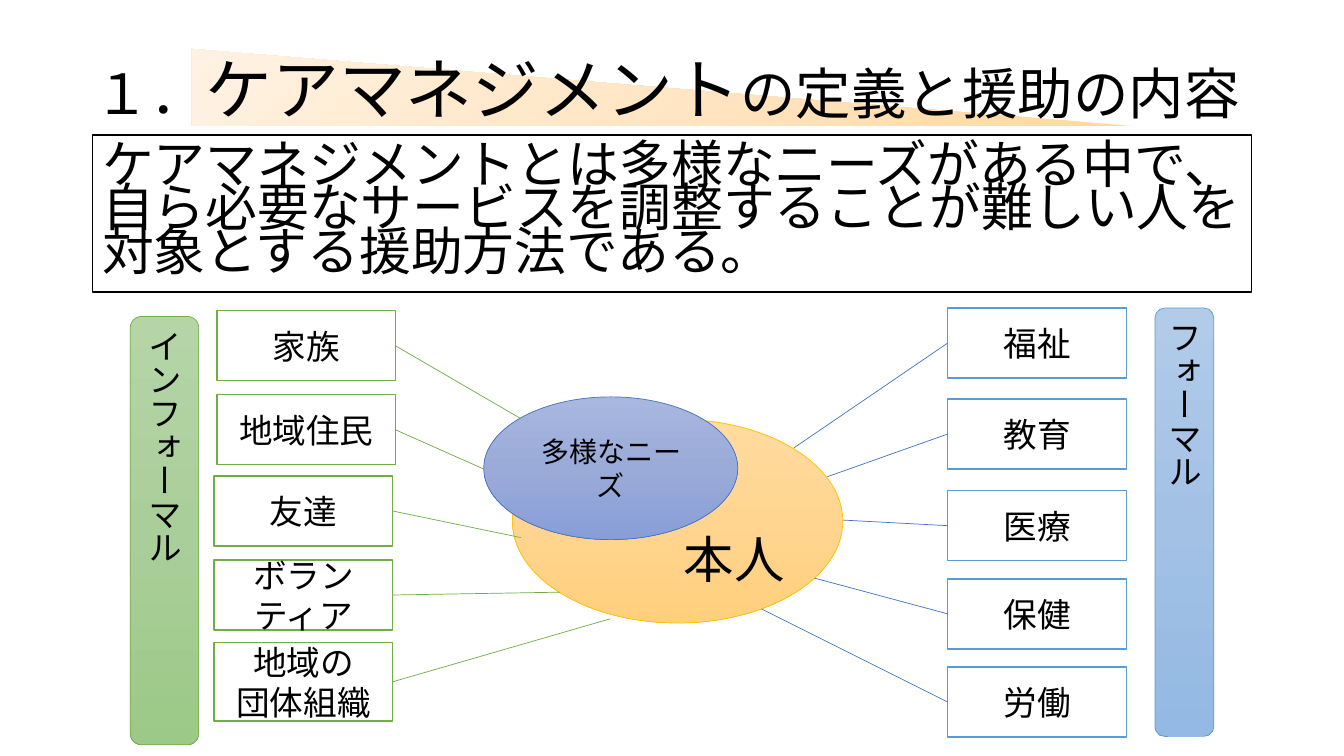
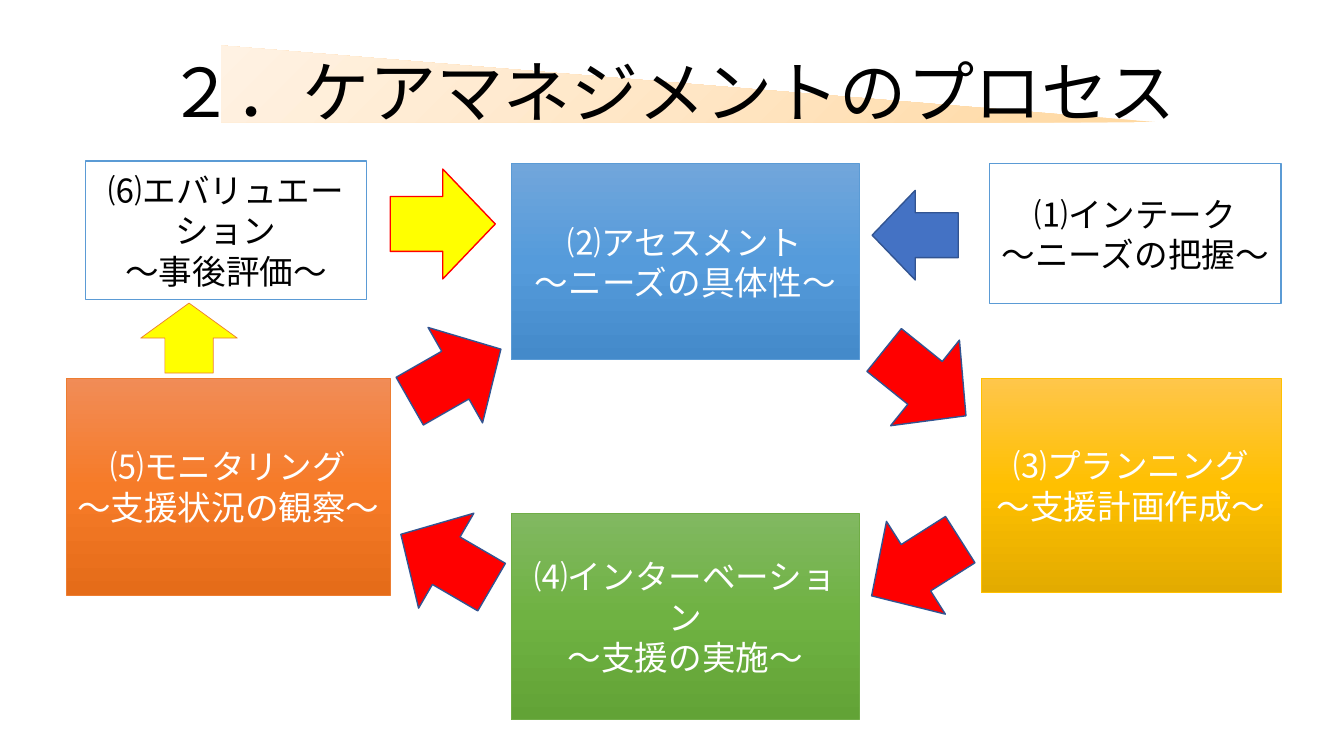
from lxml.etree import SubElement
from pptx import Presentation
from pptx.dml.color import RGBColor
from pptx.enum.lang import MSO_LANGUAGE_ID
from pptx.enum.shapes import MSO_CONNECTOR, MSO_SHAPE
from pptx.enum.text import MSO_ANCHOR, MSO_AUTO_SIZE, PP_ALIGN
from pptx.oxml.ns import qn
from pptx.util import Pt

COLORS = {
    "white": "FFFFFF",
    "black": "000000",
    "red": "FF0000",
    "yellow": "FFFF00",
    "blue": "4472C4",
    "navy": "325491",
    "sky": "5B9BD5",
    "green": "70AD47",
    "orange": "ED7D31",
    "gold": "FFC000",
}
GRADIENTS = {
    "title wedge": "FFD8A0 FFE6C5 FFF2E3",
    "formal bar": "B1CBE9 A3C1E5 93B9E4",
    "informal bar": "B5D5A7 AACE9A 9CC987",
    "person": "FFDB9E FFD590 FFD07C",
    "needs": "A8B7DF 9AABD9 889ED7",
    "assessment": "71A6DB 559BDB 448ACA",
    "planning": "FFC64B FFC000 E3AB00",
    "intervention": "81B861 6FB242 62A336",
    "monitoring": "F18C57 F67B28 E56C19",
}
GOTHIC = "Noto Sans CJK JP"
CALIBRI = "Calibri"
LEFT_SIDE, RIGHT_SIDE = 1, 3


def color(name):
    """Return the named colour."""
    return RGBColor.from_string(COLORS[name])


def points(*lengths):
    """Convert numbers to point lengths."""
    return [Pt(length) for length in lengths]


def format_span(span, size, font=GOTHIC, ink="black"):
    """Format one run of Japanese text."""
    span.font.size = Pt(size)
    span.font.name = font
    span.font.color.rgb = color(ink)
    span.font.language_id = MSO_LANGUAGE_ID.JAPANESE
    east_asian = SubElement(span.font._element, qn("a:ea"))
    east_asian.set("typeface", CALIBRI)


def paint(shape, fill, angle=90):
    """Fill a shape with a plain colour or a three-stop gradient."""
    if fill in COLORS:
        shape.fill.solid()
        shape.fill.fore_color.rgb = color(fill)
        return
    shape.fill.gradient()
    shape.fill.gradient_angle = 360 - angle
    stops = shape.element.spPr.find(".//" + qn("a:gsLst"))
    for stop in list(stops):
        stops.remove(stop)
    for index, value in enumerate(GRADIENTS[fill].split()):
        stop = SubElement(stops, qn("a:gs"), pos=str(index * 50000))
        SubElement(stop, qn("a:srgbClr"), val=value)


def add_figure(page, kind, place, fill, line=None, width=1, rotation=0, angle=90):
    """Add a preset shape without shadow."""
    shape = page.shapes.add_shape(kind, *points(*place))
    shape.shadow.inherit = False
    shape.rotation = rotation
    paint(shape, fill, angle)
    if line:
        shape.line.color.rgb = color(line)
        shape.line.width = Pt(width)
    else:
        shape.line.fill.background()
    return shape


def write(shape, text, size=24, font=GOTHIC, ink="black",
          align=PP_ALIGN.CENTER, anchor=MSO_ANCHOR.MIDDLE):
    """Put formatted text into a shape."""
    frame = shape.text_frame
    frame.text = text
    frame.word_wrap = True
    frame.vertical_anchor = anchor
    for para in frame.paragraphs:
        para.alignment = align
        for span in para.runs:
            format_span(span, size, font, ink)
    return frame


def add_box(page, place, text, line):
    """Add a white outlined box with black text."""
    box = add_figure(page, MSO_SHAPE.RECTANGLE, place, "white", line)
    write(box, text)
    return box


def add_bar(page, place, text, fill, line):
    """Add a rounded bar with vertical text."""
    bar = add_figure(page, MSO_SHAPE.ROUNDED_RECTANGLE, place, fill, line, 0.5)
    frame = write(bar, text, align=PP_ALIGN.LEFT)
    frame._txBody.bodyPr.set("vert", "eaVert")


def add_link(page, box, side, target, line):
    """Join the side of a box to a point."""
    link = page.shapes.add_connector(MSO_CONNECTOR.STRAIGHT, 0, 0, *points(*target))
    link.begin_connect(box, side)
    link.line.color.rgb = color(line)
    link.line.width = Pt(0.5)
    SubElement(link.element.spPr, qn("a:effectLst"))


def add_page(deck, title_place, title_spans, wedge_left, wedge_top):
    """Add a slide with its title over a gradient wedge."""
    page = deck.slides.add_slide(deck.slide_layouts[5])
    title = page.shapes.title
    title.left, title.top, title.width, title.height = points(*title_place)
    frame = title.text_frame
    frame.word_wrap = True
    frame.auto_size = MSO_AUTO_SIZE.NONE
    frame.vertical_anchor = MSO_ANCHOR.MIDDLE
    para = frame.paragraphs[0]
    para.alignment = PP_ALIGN.CENTER
    para.line_spacing = 0.9
    for text, size in title_spans:
        span = para.add_run()
        span.text = text
        format_span(span, size)
    wedge = add_figure(page, MSO_SHAPE.RIGHT_TRIANGLE,
                       (wedge_left, wedge_top, 671, 55), "title wedge", angle=225)
    title.element.addprevious(wedge.element)
    return page


def add_definition(page):
    """Add the framed definition of care management."""
    box = add_figure(page, MSO_SHAPE.RECTANGLE, (66, 96.5, 828, 112), "white", "black")
    text = ("ケアマネジメントとは多様なニーズがある中で、"
            "自ら必要なサービスを調整することが難しい人を対象とする援助方法である。")
    frame = write(box, text, 37, CALIBRI, align=PP_ALIGN.LEFT)
    frame.margin_right = Pt(4)
    frame.paragraphs[0].line_spacing = 0.7
    frame.paragraphs[0].space_before = Pt(10)


def build_support_page(deck):
    """Build the slide on the definition and the supports."""
    page = add_page(deck, (45, 39.5, 863, 53),
                    [("１．", 39.6), ("ケアマネジメント", 47.7),
                     ("の定義と援助の内容", 39.6)], 137, 35)
    add_definition(page)
    person = add_figure(page, MSO_SHAPE.OVAL, (366, 299.5, 236, 145.5),
                        "person", "gold", 0.5)
    write(person, "本人", 36, CALIBRI, align=PP_ALIGN.RIGHT, anchor=MSO_ANCHOR.BOTTOM)
    needs = add_figure(page, MSO_SHAPE.OVAL, (345.5, 283.5, 181.5, 102),
                       "needs", "blue", 0.5)
    write(needs, "多様なニーズ", 20)
    add_bar(page, (93, 226, 49, 306), "インフォーマル", "informal bar", "green")
    add_bar(page, (825, 220, 42, 306), "フォーマル", "formal bar", "sky")

    informal = [
        ("家族", 155, 222, 50, (372, 299)),
        ("地域住民", 155, 282, 50, (345.5, 335)),
        ("友達", 153, 340, 50, (372, 384)),
        ("ボランティア", 153, 400, 50, (400, 423)),
        ("地域の\n団体組織", 153, 459, 56, (436, 442)),
    ]
    for text, left, top, height, target in informal:
        box = add_box(page, (left, top, 127.5, height), text, "green")
        add_link(page, box, RIGHT_SIDE, target, "green")

    formal = [
        ("福祉", 220, (567, 320)),
        ("教育", 285, (591, 340.5)),
        ("医療", 350.5, (602, 371.5)),
        ("保健", 413.5, (582, 413)),
        ("労働", 476.5, (544, 435)),
    ]
    for text, top, target in formal:
        box = add_box(page, (677, top, 127.5, 50), text, "sky")
        add_link(page, box, LEFT_SIDE, target, "blue")


def build_process_page(deck):
    """Build the slide on the process cycle."""
    page = add_page(deck, (91, 42, 778, 52.5),
                    [("２．ケアマネジメントのプロセス", 48)], 158, 32.5)
    add_box(page, (707, 117, 208, 100), "⑴インテーク\n～ニーズの把握～", "sky")
    add_box(page, (61, 115, 201, 99), "⑹エバリュエーション\n～事後評価～", "sky")

    stages = [
        ("⑵アセスメント\n～ニーズの具体性～", (365, 117, 249, 140), "assessment", "sky"),
        ("⑶プランニング\n～支援計画作成～", (701, 270, 214, 153.5), "planning", "gold"),
        ("⑷インターベーション\n～支援の実施～", (365, 367, 249, 147),
         "intervention", "green"),
        ("⑸モニタリング\n～支援状況の観察～", (47.5, 270, 231, 155),
         "monitoring", "orange"),
    ]
    for text, place, fill, line in stages:
        stage = add_figure(page, MSO_SHAPE.RECTANGLE, place, fill, line, 0.5)
        write(stage, text, ink="white")

    add_figure(page, MSO_SHAPE.LEFT_ARROW, (623, 136, 61.5, 64), "blue", "navy")
    add_figure(page, MSO_SHAPE.LEFT_ARROW, (110, 207, 50, 69),
               "yellow", "orange", 0.5, 90)
    turns = [
        (621.5, 236, 128.8, "red", "navy"),
        (615, 368, 237.6, "red", "navy"),
        (279.5, 363, 300.2, "red", "navy"),
        (286, 230.5, 60.3, "red", "navy"),
        (277, 122.5, 90, "yellow", "red"),
    ]
    for left, top, rotation, fill, line in turns:
        add_figure(page, MSO_SHAPE.UP_ARROW, (left, top, 78.5, 75),
                   fill, line, rotation=rotation)


def main():
    """Build and save the deck."""
    deck = Presentation()
    deck.slide_width, deck.slide_height = points(960, 540)
    build_support_page(deck)
    build_process_page(deck)
    deck.save("out.pptx")


if __name__ == "__main__":
    main()
